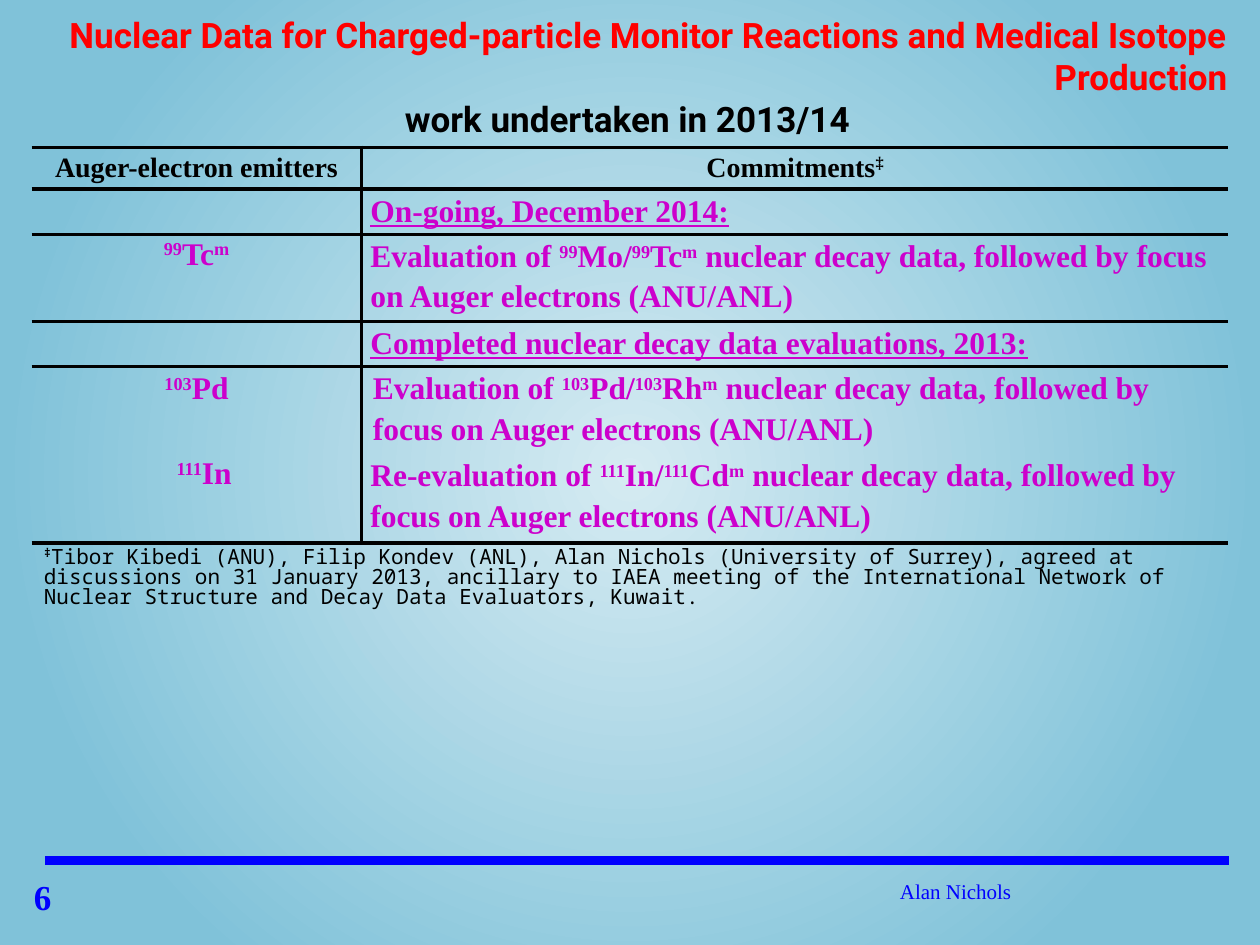
from lxml import etree
from pptx import Presentation, util as u
from pptx.dml.color import RGBColor
from pptx.enum import shapes, text
from pptx.oxml.ns import qn

HUE = {"pale": "D5EBF2", "sky": "80C2D9", "blue": "0000FF",
       "red": "FF0000", "black": "000000", "pink": "CC00CC"}
SERIF = "Times New Roman"
LEFT, MID, RIGHT = text.PP_ALIGN.LEFT, text.PP_ALIGN.CENTER, text.PP_ALIGN.RIGHT

deck = Presentation()
deck.slide_width, deck.slide_height = u.Inches(10), u.Inches(7.5)
unit = deck.slide_width / 100
slide = deck.slides.add_slide(deck.slide_layouts[6])


def say(frame, words, size=18, font=SERIF, hue="black", bold=True, line=False,
        align=LEFT, lead=None, hang=0):
    para = frame.paragraphs[0]
    if para.runs:
        para = frame.add_paragraph()
    para.alignment = align
    if lead:
        para.line_spacing = lead
    if hang:
        props = para._p.get_or_add_pPr()
        props.set("marL", str(int(hang * unit)))
        props.set("indent", str(int(-hang * unit)))
    for i, part in enumerate(words.split("^")):
        if part:
            raised = i % 2 == 1
            run = para.add_run()
            run.text = part
            face = run.font
            face.size, face.name = u.Pt(size), font
            face.bold, face.underline = bold or raised, line
            face.color.rgb = RGBColor.from_string(HUE[hue])
            if raised:
                run._r.get_or_add_rPr().set("baseline", "30000")


def box(*spot):
    frame = slide.shapes.add_textbox(*[int(n * unit) for n in spot]).text_frame
    frame.word_wrap = True
    return frame


fill = slide.background.fill
fill.gradient()
for stop, hue, spot in zip(fill.gradient_stops, ("pale", "sky"), (0, 0.8)):
    stop.color.rgb = RGBColor.from_string(HUE[hue])
    stop.position = spot
grad = slide.background._cSld.find(".//" + qn("a:gradFill"))
grad.remove(grad.find(qn("a:lin")))
ring = etree.SubElement(grad, qn("a:path"))
ring.set("path", "circle")
rect = etree.SubElement(ring, qn("a:fillToRect"))
for side in "ltrb":
    rect.set(side, "50000")

rule = slide.shapes.add_connector(shapes.MSO_CONNECTOR.STRAIGHT, *[
    int(n * unit) for n in (3.6, 68.3, 97.5, 68.3)])
rule.line.width = u.Pt(5.5)
rule.line.color.rgb = RGBColor.from_string(HUE["blue"])
etree.SubElement(rule._element.spPr, qn("a:effectLst"))

say(box(1.7, 69, 8.3, 4.3), "6", size=20, hue="blue")

cols = [26.2, 68.8]
rows = [3.3, 3.6, 6.9, 3.6, 6.9, 7.1]
shape = slide.shapes.add_table(len(rows), len(cols), *[
    int(n * unit) for n in (2.5, 11.7, sum(cols), sum(rows))])
grid = shape.table
grid.first_row = grid.horz_banding = False
shape._element.find(".//" + qn("a:tableStyleId")).text = \
    "{2D5ABB26-0587-4C30-8999-92F81FD0307C}"
for col, wide in zip(grid.columns, cols):
    col.width = int(wide * unit)
for row, high in zip(grid.rows, rows):
    row.height = int(high * unit)

edges = {0: ("lnT", "lnB"), 1: ("lnT",), 2: ("lnB",), 3: ("lnT",), 4: (), 5: ("lnB",)}
for r in range(len(rows)):
    for c in range(len(cols)):
        cell = grid.cell(r, c)
        cell.margin_left = cell.margin_right = int(0.7 * unit)
        cell.margin_top = cell.margin_bottom = 0
        cell.fill.background()
        props = cell._tc.get_or_add_tcPr()
        for i, edge in enumerate((("lnR", "lnL")[c],) + edges[r]):
            line = etree.Element(qn("a:" + edge), w=str(u.Pt(2.25)))
            ink = etree.SubElement(line, qn("a:solidFill"))
            etree.SubElement(ink, qn("a:srgbClr"), val=HUE["black"])
            props.insert(i, line)

for c, words in enumerate(("Auger-electron emitters", "Commitments^‡^")):
    say(grid.cell(0, c).text_frame, words, size=16, align=MID, lead=1.15)

tail = "focus on Auger electrons (ANU/ANL)"
data = "nuclear decay data, followed by"
tight = u.Pt(21.6)
for r, name, gap, lines in (
        (1, "", None, ["On-going, December 2014:"]),
        (2, "^99^Tc^m^", tight, [f"Evaluation of ^99^Mo/^99^Tc^m^ {data} {tail}"]),
        (3, "", None, ["Completed nuclear decay data evaluations, 2013:"]),
        (4, "^103^Pd", 1.15, [f"Evaluation of ^103^Pd/^103^Rh^m^ {data}", tail]),
        (5, "^111^In", tight, [f"Re-evaluation of ^111^In/^111^Cd^m^ {data} {tail}"])):
    say(grid.cell(r, 0).text_frame, name, hue="pink", align=MID, lead=gap)
    for words in lines:
        say(grid.cell(r, 1).text_frame, words, hue="pink", lead=1.15, line=not name)
grid.cell(4, 1).margin_left = int(0.9 * unit)
grid.cell(5, 0).margin_left = int(1.9 * unit)

head = box(1.2, 0.6, 97.2, 11.1)
say(head, "Nuclear Data for Charged-particle Monitor Reactions and Medical Isotope Production",
    size=20, font="Roboto", hue="red", align=RIGHT, hang=3.1)
say(head, "work undertaken in 2013/14", size=20, font="Roboto", align=MID, hang=3.1)

say(box(55, 69.2, 41.7, 5), "Alan Nichols", size=12, hue="blue", bold=False, align=MID)
say(box(2.5, 43, 97.5, 4.3),
    "^‡^Tibor Kibedi (ANU), Filip Kondev (ANL), Alan Nichols (University of Surrey), "
    "agreed at discussions on 31 January 2013, ancillary to IAEA meeting of the "
    "International Network of Nuclear Structure and Decay Data Evaluators, Kuwait.",
    size=12, font="Noto Sans Mono", bold=False, lead=0.8)

deck.save("out.pptx")
